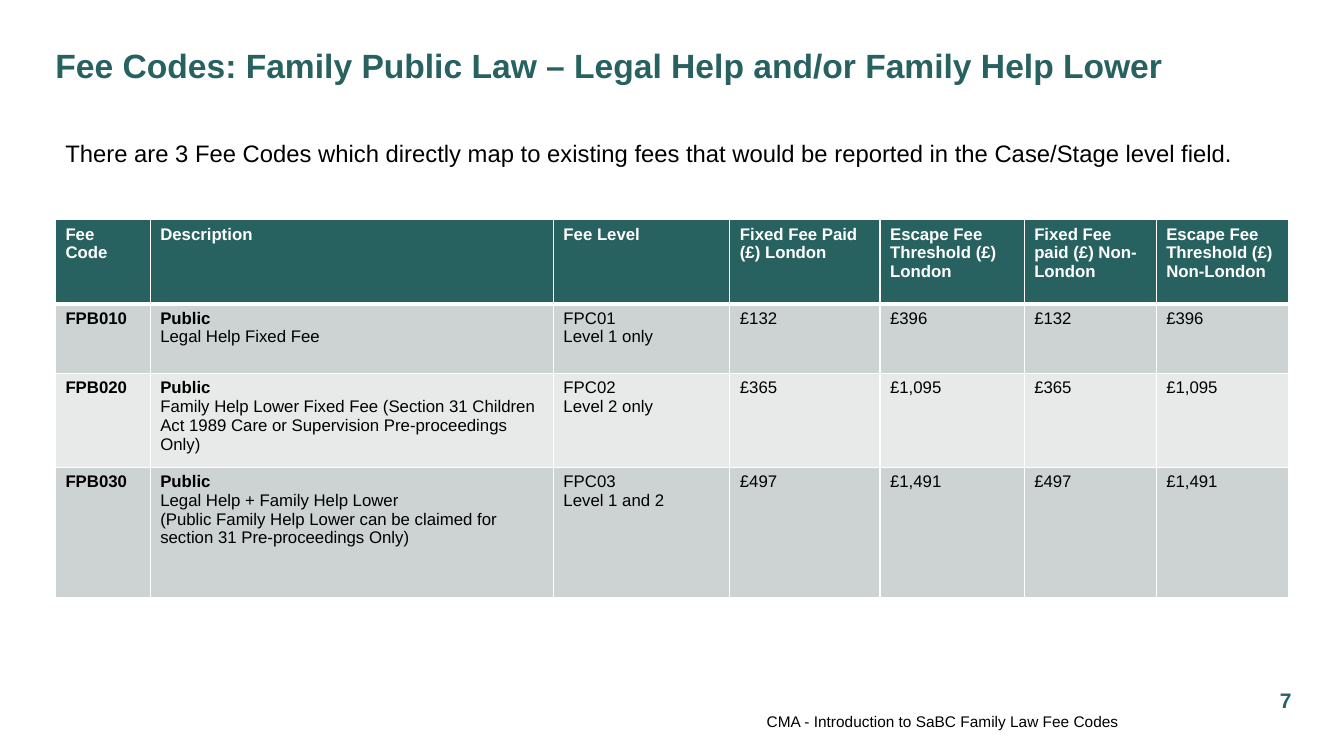
from dataclasses import dataclass

from lxml.etree import SubElement
from pptx import Presentation
from pptx.dml.color import RGBColor
from pptx.enum.text import MSO_ANCHOR, PP_ALIGN
from pptx.oxml.ns import qn
from pptx.slide import Slide
from pptx.table import _Cell
from pptx.text.text import TextFrame
from pptx.util import Pt

TEAL = RGBColor(0x27, 0x61, 0x60)
DARK_BAND = RGBColor(0xCD, 0xD2, 0xD2)
LIGHT_BAND = RGBColor(0xE8, 0xEA, 0xEA)
WHITE = RGBColor(0xFF, 0xFF, 0xFF)
BLACK = RGBColor(0x00, 0x00, 0x00)
FONT = "Arial"

LEFT = 39.6
COLUMN_WIDTHS = (67.7, 288, 126, 107.3, 103, 94.3, 94.3)
ROW_HEIGHTS = (60, 49.7, 67, 92.9)
HEADINGS = (
    "Fee Code",
    "Description",
    "Fee Level",
    "Fixed Fee Paid (£) London",
    "Escape Fee Threshold (£) London",
    "Fixed Fee paid (£) Non-London",
    "Escape Fee Threshold (£) Non-London",
)


@dataclass
class Fee:
    code: str
    description: tuple[str, ...]
    level: tuple[str, ...]
    fixed_fee: str
    escape_threshold: str


FEES = (
    Fee("FPB010", ("Legal Help Fixed Fee",), ("FPC01", "Level 1 only"), "£132", "£396"),
    Fee(
        "FPB020",
        ("Family Help Lower Fixed Fee (Section 31 Children Act 1989 Care or "
         "Supervision Pre-proceedings Only)",),
        ("FPC02", "Level 2 only"), "£365", "£1,095",
    ),
    Fee(
        "FPB030",
        ("Legal Help + Family Help Lower",
         "(Public Family Help Lower can be claimed for section 31 Pre-proceedings Only)"),
        ("FPC03", "Level 1 and 2"), "£497", "£1,491",
    ),
)


def write(frame: TextFrame, *lines: str, size: float = 12, color: RGBColor = BLACK,
          bold_lines: int = 0, align: PP_ALIGN = PP_ALIGN.LEFT) -> None:
    """Write one paragraph per line; the first bold_lines of them are bold."""
    for index, line in enumerate(lines):
        paragraph = frame.paragraphs[0] if index == 0 else frame.add_paragraph()
        paragraph.alignment = align
        run = paragraph.add_run()
        run.text = line
        run.font.name = FONT
        run.font.size = Pt(size)
        run.font.bold = index < bold_lines
        run.font.color.rgb = color


def center_without_margins(frame: TextFrame) -> None:
    frame.margin_left = frame.margin_right = frame.margin_top = frame.margin_bottom = 0
    frame.vertical_anchor = MSO_ANCHOR.MIDDLE
    frame.word_wrap = True


def add_text_box(slide: Slide, left: float, top: float, width: float,
                 height: float) -> TextFrame:
    frame = slide.shapes.add_textbox(Pt(left), Pt(top), Pt(width), Pt(height)).text_frame
    frame.word_wrap = True
    return frame


def style_cell(cell: _Cell, fill: RGBColor, top: float, bottom: float) -> None:
    properties = cell._tc.get_or_add_tcPr()
    for side, width in (("L", 1), ("R", 1), ("T", top), ("B", bottom)):
        line = SubElement(properties, qn(f"a:ln{side}"), w=str(Pt(width)))
        solid = SubElement(line, qn("a:solidFill"))
        SubElement(solid, qn("a:srgbClr"), val=str(WHITE))
    cell.fill.solid()
    cell.fill.fore_color.rgb = fill


def add_fee_table(slide: Slide) -> None:
    table = slide.shapes.add_table(
        len(ROW_HEIGHTS), len(COLUMN_WIDTHS), Pt(LEFT), Pt(157),
        Pt(sum(COLUMN_WIDTHS)), Pt(sum(ROW_HEIGHTS))).table
    for column, width in zip(table.columns, COLUMN_WIDTHS):
        column.width = Pt(width)
    for row, height in zip(table.rows, ROW_HEIGHTS):
        row.height = Pt(height)

    # Header row
    for column_index, heading in enumerate(HEADINGS):
        cell = table.cell(0, column_index)
        style_cell(cell, TEAL, top=1, bottom=3)
        write(cell.text_frame, heading, color=WHITE, bold_lines=1)

    # Banded fee rows: the London and non-London amounts are the same
    for row_index, fee in enumerate(FEES, start=1):
        amounts = ((fee.fixed_fee,), (fee.escape_threshold,)) * 2
        contents = ((fee.code,), ("Public", *fee.description), fee.level, *amounts)
        for column_index, lines in enumerate(contents):
            cell = table.cell(row_index, column_index)
            style_cell(cell, DARK_BAND if row_index % 2 else LIGHT_BAND,
                       top=3 if row_index == 1 else 1, bottom=1)
            write(cell.text_frame, *lines, bold_lines=1 if column_index < 2 else 0)


def main() -> None:
    presentation = Presentation()
    presentation.slide_width, presentation.slide_height = Pt(960), Pt(540)
    slide = presentation.slides.add_slide(presentation.slide_layouts[5])

    # Title
    title = slide.shapes.title
    title.left, title.top, title.width, title.height = Pt(LEFT), Pt(25.2), Pt(862), Pt(42.5)
    center_without_margins(title.text_frame)
    write(title.text_frame, "Fee Codes: Family Public Law – Legal Help and/or Family Help Lower",
          size=24, color=TEAL, bold_lines=1)

    # Introduction and table
    introduction = add_text_box(slide, LEFT, 95.8, 881.3, 28)
    write(introduction, "There are 3 Fee Codes which directly map to existing fees that "
          "would be reported in the Case/Stage level field.", size=17)
    add_fee_table(slide)

    # Footer and page number
    footer = add_text_box(slide, 231.8, 508, 567.4, 14.4)
    center_without_margins(footer)
    write(footer, "CMA - Introduction to SaBC Family Law Fee Codes", size=11,
          align=PP_ALIGN.RIGHT)
    page_number = add_text_box(slide, 900.7, 486, 35.3, 28.8)
    center_without_margins(page_number)
    write(page_number, "7", size=15, color=TEAL, bold_lines=1, align=PP_ALIGN.CENTER)

    presentation.save("out.pptx")


if __name__ == "__main__":
    main()
